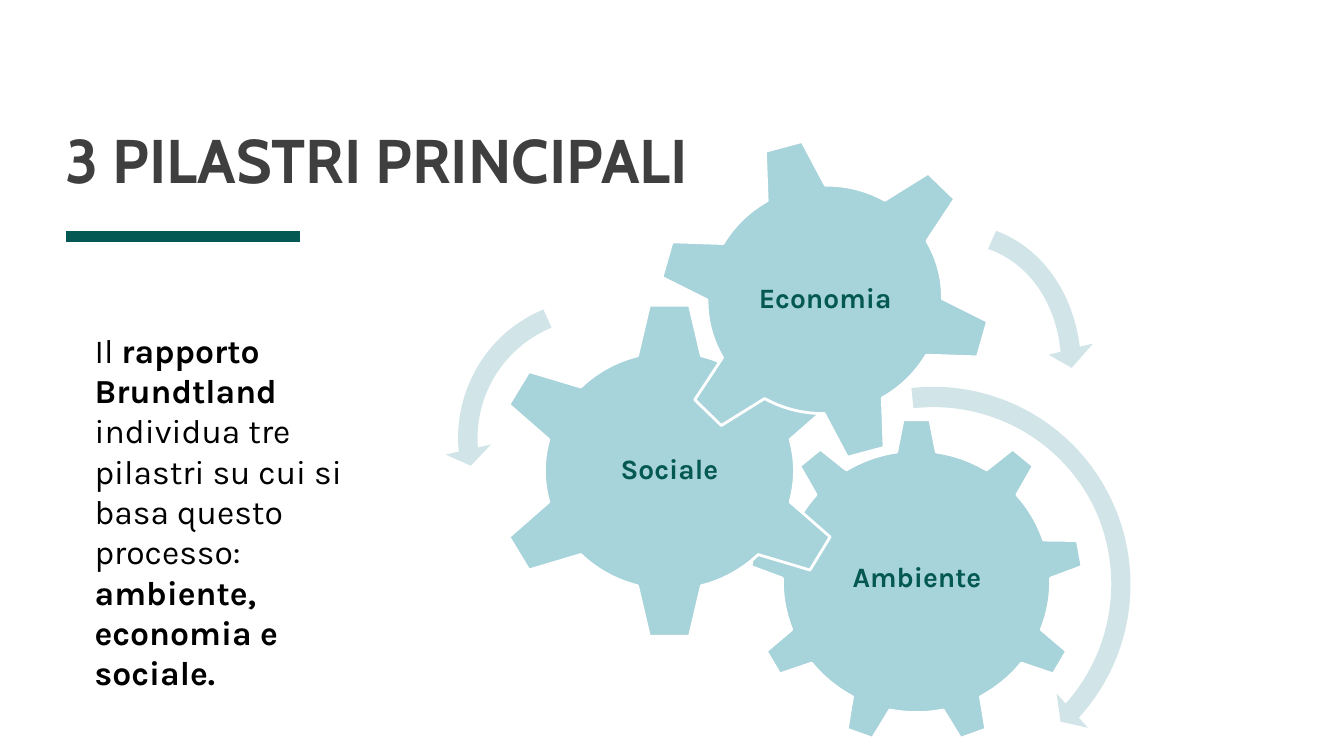
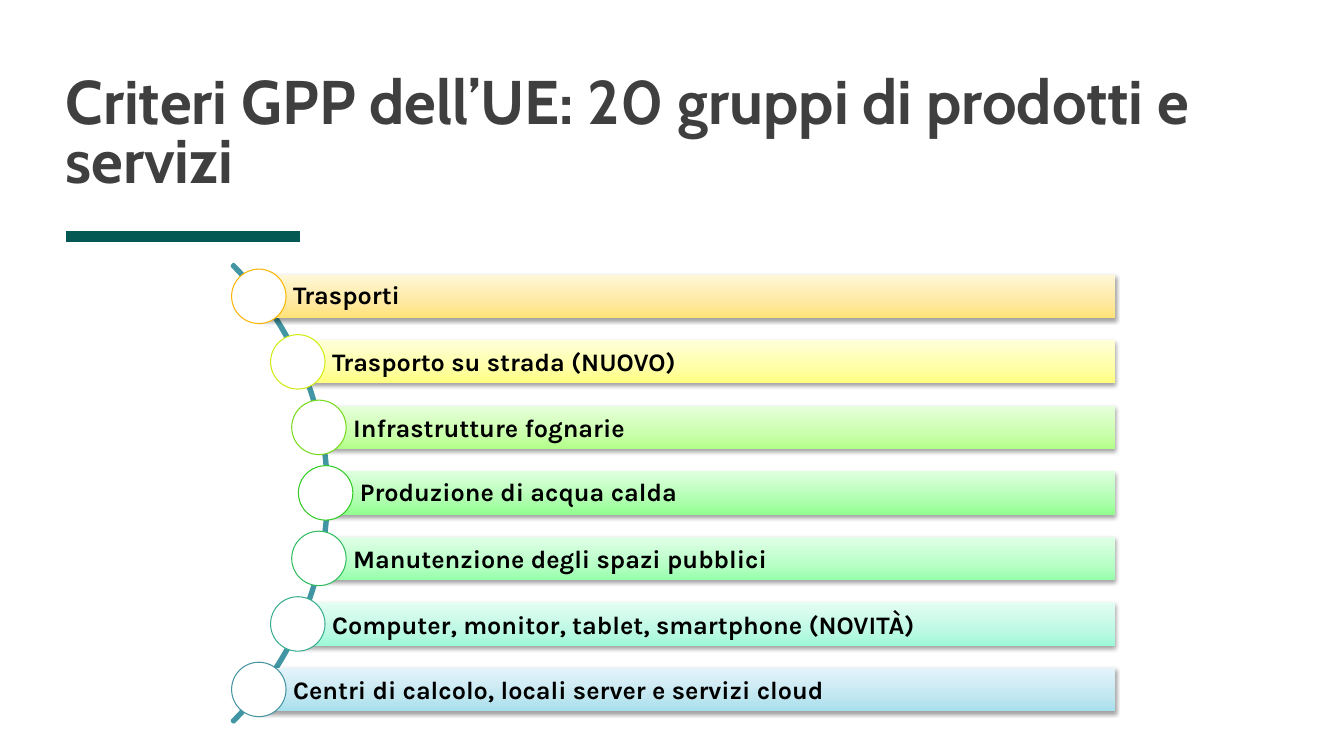
import math

from lxml import etree
from pptx import Presentation
from pptx.dml.color import RGBColor
from pptx.enum import shapes, text
from pptx.oxml import parse_xml
from pptx.oxml.ns import nsdecls, qn
from pptx.util import Inches, Pt

WHITE, BLACK, GREY = "FFFFFF", "000000", "3F3F3F"
DARK_TEAL, GEAR_BLUE, ARROW_BLUE, ARC_BLUE = "035854", "A7D3DA", "D1E5E9", "4295A2"
TITLE_FONT, BODY_FONT = "Cabin", "Karla"

PILLARS_TITLE = "3 PILASTRI PRINCIPALI"
REPORT_RUNS = [
    ("Il ", False),
    ("rapporto Brundtland ", True),
    ("individua tre pilastri su cui si basa questo processo: ", False),
    ("ambiente, economia e sociale.", True),
]
# Tooth: half angle at its base, half angle at its tip, tip reach (body radius = 1)
SMALL_TOOTH, LARGE_TOOTH = (8.5, 4.65, 1.24), (14.8, 6.6, 1.4)
# Label and its area, turn, gear centre, body radii, number of teeth, tooth
GEARS = [
    ("Ambiente", (8.1, 4.9, 1.99, 1.68), 0, (9.09, 5.77), (1.33, 1.3), 9, SMALL_TOOTH),
    ("Sociale", (5.75, 3.84, 1.78, 1.66), 0, (6.64, 4.67), (1.24, 1.18), 6, LARGE_TOOTH),
    ("Economia", (7.25, 2.05, 1.87, 1.84), -15, (8.18, 2.97), (1.17, 1.13), 6, LARGE_TOOTH),
]
# Two numbers: a line to that point; six numbers: a Bézier curve
ARROWS = [
    [(9.04, 3.85), (9.85, 3.76, 10.63, 4.18, 11, 4.91),
     (11.37, 5.64, 11.25, 6.52, 10.7, 7.12), (10.79, 7.22), (10.52, 7.16),
     (10.48, 6.88), (10.57, 6.98), (11.06, 6.43, 11.16, 5.64, 10.83, 4.99),
     (10.49, 4.34, 9.79, 3.97, 9.06, 4.05)],
    [(5.39, 3.07), (5.47, 3.25), (4.99, 3.45, 4.7, 3.93, 4.74, 4.44),
     (4.87, 4.41), (4.67, 4.62), (4.42, 4.51), (4.55, 4.48),
     (4.49, 3.88, 4.83, 3.3, 5.39, 3.07)],
    [(9.88, 2.29), (10.33, 2.46, 10.64, 2.89, 10.71, 3.44), (10.84, 3.41),
     (10.63, 3.65), (10.4, 3.52), (10.52, 3.49),
     (10.47, 2.99, 10.2, 2.61, 9.8, 2.47)],
]

CRITERIA_TITLE = "Criteri GPP dell’UE: 20 gruppi di prodotti e servizi"
# Label, line spacing, circle outline, gradient from bottom to top
CRITERIA = [
    ("Trasporti", 0.9, "FAB506", ("FFE376", "FFE9A1", "FFF7D7")),
    ("Trasporto su strada (NUOVO)", 1.0, "D0EB10", ("FFFF7E", "FFFFA5", "FFFFDA")),
    ("Infrastrutture fognarie", 1.0, "77DA1C", ("B3FF89", "CAFFAC", "E7FFDC")),
    ("Produzione di acqua calda", 0.9, "32CC26", ("92FF8F", "B1FFB1", "DFFFDF")),
    ("Manutenzione degli spazi pubblici", 1.0, "30BC5E",
     ("97FFAB", "B7FFC6", "E1FFE8")),
    ("Computer, monitor, tablet, smartphone (NOVITÀ)", 1.0, "39AE8F",
     ("9EF9D7", "BDF9E4", "E5FDF3")),
    ("Centri di calcolo, locali server e servizi cloud", 1.0, "4393A0",
     ("A6DFED", "C2E7F0", "E6F4FB")),
]
ARC_X, ARC_Y, ARC_RADIUS = 0.03, 4.89, 3.2
BAR_RIGHT, BAR_HEIGHT, BAR_STEP, CIRCLE = 11.06, 0.43, 0.65, 0.54


def rgb(value):
    return RGBColor.from_string(value)


def box(*lengths):
    return [Inches(length) for length in lengths]


def style_run(run, font, size, color, bold=True):
    run.font.name, run.font.size, run.font.bold = font, Pt(size), bold
    run.font.color.rgb = rgb(color)


def set_margins(frame, left, top, right, bottom):
    frame.margin_left, frame.margin_top = Inches(left), Inches(top)
    frame.margin_right, frame.margin_bottom = Inches(right), Inches(bottom)


def style_shape(shape, fill=None, line=None, width=1):
    shape.shadow.inherit = False
    for part, color in ((shape.fill, fill), (shape.line.fill, line)):
        if color:
            part.solid()
            part.fore_color.rgb = rgb(color)
        else:
            part.background()
    if line:
        shape.line.width = Pt(width)


def write_label(shape, label, size, color, align, spacing=0.9):
    frame = shape.text_frame
    frame.text = label
    frame.word_wrap = True
    frame.vertical_anchor = text.MSO_ANCHOR.MIDDLE
    paragraph = frame.paragraphs[0]
    paragraph.alignment, paragraph.line_spacing = align, spacing
    style_run(paragraph.runs[0], BODY_FONT, size, color)


def prepare_layout(layout, slide):
    """Set the title area and put the rule under it on the layout."""
    title = layout.placeholders[0]
    title.left, title.top, title.width, title.height = box(0.65, 0.22, 12, 1.72)
    frame = title.text_frame
    set_margins(frame, 0, 0, 0, 0)
    frame.vertical_anchor = text.MSO_ANCHOR.BOTTOM
    frame.auto_size = text.MSO_AUTO_SIZE.NONE
    rule = slide.shapes.add_connector(
        shapes.MSO_CONNECTOR.STRAIGHT, *box(0.65, 2.35, 2.98, 2.35))
    rule.line.color.rgb, rule.line.width = rgb(DARK_TEAL), Pt(8)
    etree.SubElement(rule.element.spPr, qn("a:effectLst"))
    rule.element.nvCxnSpPr.cNvPr.set("id", "20")
    layout.shapes.element.append(rule.element)


def write_title(slide, title):
    frame = slide.shapes.title.text_frame
    frame.text = title
    paragraph = frame.paragraphs[0]
    paragraph.alignment, paragraph.line_spacing = text.PP_ALIGN.LEFT, 0.8
    style_run(paragraph.runs[0], TITLE_FONT, 44, GREY)


def add_outline(slide, segments):
    """Draw a closed outline of lines and Bézier curves."""
    corners = [box(*segment[-2:]) for segment in segments]
    builder = slide.shapes.build_freeform(*corners[0])
    builder.add_line_segments(corners[1:], close=True)
    outline = builder.convert_to_shape()
    left, top = outline.left, outline.top
    sides = list(outline.element.iter(qn("a:lnTo")))
    for side, segment in zip(sides, segments[1:]):
        if len(segment) == 6:
            side.tag = qn("a:cubicBezTo")
            for index in (0, 2):
                x, y = box(*segment[index:index + 2])
                control = etree.Element(qn("a:pt"), x=str(x - left), y=str(y - top))
                side.insert(index // 2, control)
    return outline


def gear_segments(centre, radii, teeth, tooth):
    base, tip, reach = tooth
    pitch = 360 / teeth
    gap = math.radians(pitch - 2 * base)
    pull = 4 / 3 * math.tan(gap / 4)

    def place(degrees, radius=1, along=0):
        """Find a point, moved along the tangent if wanted."""
        angle = math.radians(degrees)
        x = radius * math.sin(angle) + along * math.cos(angle)
        y = along * math.sin(angle) - radius * math.cos(angle)
        return centre[0] + radii[0] * x, centre[1] + radii[1] * y

    segments = [place(-base)]
    for number in range(teeth):
        middle = number * pitch
        start, end = middle + base, middle + pitch - base
        segments += [place(middle - tip, reach), place(middle + tip, reach),
                     place(start),
                     place(start, along=pull) + place(end, along=-pull) + place(end)]
    return segments


def shade_bar(bar, colors):
    """Give a bar its three-stop gradient and its soft shadow."""
    stops = "".join(
        f'<a:gs pos="{pos}"><a:srgbClr val="{color}"/></a:gs>'
        for pos, color in zip((0, 35000, 100000), colors))
    properties = bar.element.spPr
    properties.replace(properties.find(qn("a:noFill")), parse_xml(
        f'<a:gradFill {nsdecls("a")} rotWithShape="1"><a:gsLst>{stops}</a:gsLst>'
        '<a:lin ang="16200000" scaled="0"/></a:gradFill>'))
    properties.find(qn("a:effectLst")).append(parse_xml(
        f'<a:outerShdw {nsdecls("a")} blurRad="{Pt(3.1)}" dist="{Pt(1.6)}" '
        'dir="5400000" rotWithShape="0"><a:srgbClr val="000000">'
        '<a:alpha val="37000"/></a:srgbClr></a:outerShdw>'))


def build_pillars(slide):
    write_title(slide, PILLARS_TITLE)
    for label, area, turn, *geometry in GEARS:
        gear = add_outline(slide, gear_segments(*geometry))
        gear.rotation = turn
        style_shape(gear, GEAR_BLUE, WHITE, 2)
        caption = slide.shapes.add_textbox(*box(*area))
        set_margins(caption.text_frame, 0.03, 0.03, 0.03, 0.03)
        write_label(caption, label, 20, DARK_TEAL, text.PP_ALIGN.CENTER)
    for segments in ARROWS:
        style_shape(add_outline(slide, segments), ARROW_BLUE)

    report = slide.shapes.add_textbox(*box(0.84, 3.22, 2.74, 3.74)).text_frame
    report.word_wrap = True
    for words, bold in REPORT_RUNS:
        run = report.paragraphs[0].add_run()
        run.text = words
        style_run(run, BODY_FONT, 24, BLACK, bold)


def build_criteria(slide):
    write_title(slide, CRITERIA_TITLE)
    arc = slide.shapes.add_shape(
        shapes.MSO_SHAPE.BLOCK_ARC, *box(-3.17, 1.68, 6.43, 6.43))
    for index, value in enumerate((189, 27, 0.004)):
        arc.adjustments[index] = value
    style_shape(arc, line=ARC_BLUE, width=2)

    for row, (label, spacing, outline, gradient) in enumerate(CRITERIA):
        rise = (row - (len(CRITERIA) - 1) / 2) * BAR_STEP
        x, y = ARC_X + math.sqrt(ARC_RADIUS**2 - rise**2), ARC_Y + rise
        bar = slide.shapes.add_shape(
            shapes.MSO_SHAPE.RECTANGLE,
            *box(x, y - BAR_HEIGHT / 2, BAR_RIGHT - x, BAR_HEIGHT))
        style_shape(bar)
        shade_bar(bar, gradient)
        set_margins(bar.text_frame, 0.34, 0.06, 0.06, 0.06)
        write_label(bar, label, 18, BLACK, text.PP_ALIGN.LEFT, spacing)
        circle = slide.shapes.add_shape(
            shapes.MSO_SHAPE.OVAL,
            *box(x - CIRCLE / 2, y - CIRCLE / 2, CIRCLE, CIRCLE))
        style_shape(circle, WHITE, outline, 0.75)


def main():
    deck = Presentation()
    deck.slide_width, deck.slide_height = box(13.33, 7.5)
    title_only = deck.slide_layouts[5]
    pillars, criteria = [deck.slides.add_slide(title_only) for _ in range(2)]
    prepare_layout(title_only, pillars)
    build_pillars(pillars)
    build_criteria(criteria)
    deck.save("out.pptx")


if __name__ == "__main__":
    main()
